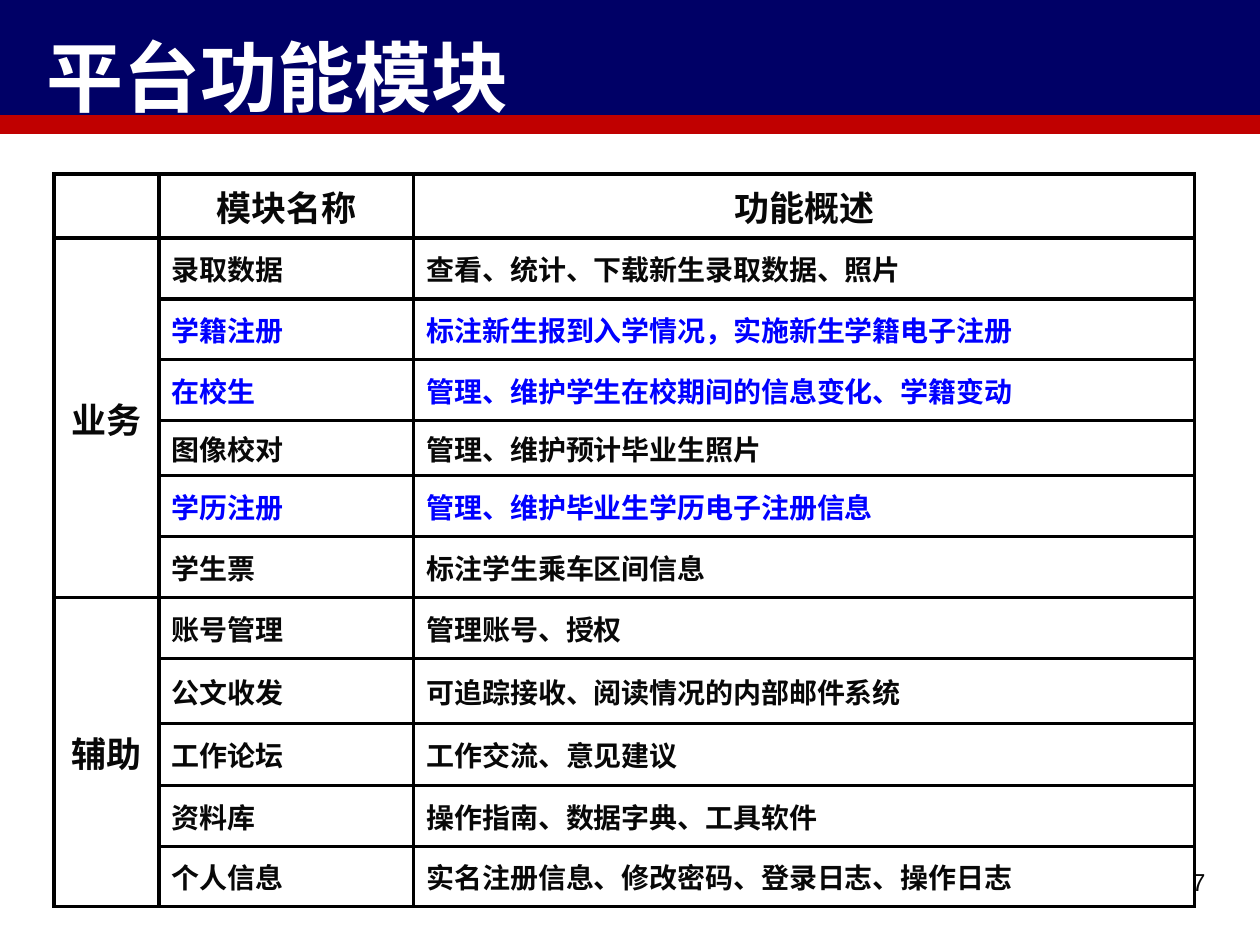
from lxml import etree
from pptx import Presentation, util as u
from pptx.dml.color import RGBColor
from pptx.enum import shapes, text
from pptx.oxml.ns import qn

CJK = "Noto Sans CJK SC"
INK, BLUE, WHITE = "080808", "0000FF", "FFFFFF"
TITLE = "平台功能模块"
PAGE_NUMBER = "7"
BANDS = [("C00000", 100, 34), ("000066", 0, 115)]
HEADINGS = ["模块名称", "功能概述"]
GROUPS = [
    ("业务", [
        ("录取数据", "查看、统计、下载新生录取数据、照片", INK),
        ("学籍注册", "标注新生报到入学情况，实施新生学籍电子注册", BLUE),
        ("在校生", "管理、维护学生在校期间的信息变化、学籍变动", BLUE),
        ("图像校对", "管理、维护预计毕业生照片", INK),
        ("学历注册", "管理、维护毕业生学历电子注册信息", BLUE),
        ("学生票", "标注学生乘车区间信息", INK),
    ]),
    ("辅助", [
        ("账号管理", "管理账号、授权", INK),
        ("公文收发", "可追踪接收、阅读情况的内部邮件系统", INK),
        ("工作论坛", "工作交流、意见建议", INK),
        ("资料库", "操作指南、数据字典、工具软件", INK),
        ("个人信息", "实名注册信息、修改密码、登录日志、操作日志", INK),
    ]),
]
COLUMN_WIDTHS = [105, 255, 781]
ROW_HEIGHTS = [64, 61, 61, 61, 55, 61, 61, 61, 65, 62, 61, 60]
INDENT = 48


def px(n):
    return u.Emu(round(n * 914400 / 126))


def color(value):
    return RGBColor.from_string(value)


def write(frame, words, size, ink, align, font=CJK, bold=True):
    frame.text = words
    paragraph = frame.paragraphs[0]
    paragraph.alignment = align
    run = paragraph.runs[0]
    for name, value in {"size": u.Pt(size), "bold": bold, "name": font}.items():
        setattr(run.font, name, value)
    run.font.color.rgb = color(ink)
    east_asian = etree.SubElement(run.font._element, qn("a:ea"))
    east_asian.set("typeface", font)
    return paragraph


def fill_cell(cell, words, size, ink, align):
    paragraph = write(cell.text_frame, words, size, ink, align)
    properties = paragraph._p.get_or_add_pPr()
    properties.set("marL", str(px(INDENT)))
    properties.set("indent", str(-px(INDENT)))


def style_cell(cell):
    cell.vertical_anchor = text.MSO_ANCHOR.MIDDLE
    properties = cell._tc.get_or_add_tcPr()
    for side in ("lnL", "lnR", "lnT", "lnB"):
        border = etree.SubElement(properties, qn(f"a:{side}"), w=str(u.Pt(2)))
        solid = etree.SubElement(border, qn("a:solidFill"))
        etree.SubElement(solid, qn("a:srgbClr"), val="000000")
    cell.fill.background()


def add_bands(slide):
    for fill, top, height in BANDS:
        band = slide.shapes.add_shape(
            shapes.MSO_SHAPE.RECTANGLE, 0, px(top), px(1260), px(height))
        band.shadow.inherit = False
        band.fill.solid()
        band.fill.fore_color.rgb = color(fill)
        band.line.fill.background()


def add_title(slide):
    title = slide.shapes.title
    slide.shapes._spTree.append(title._element)
    for name, value in zip(("left", "top", "width", "height"), (34, 26, 1071, 80)):
        setattr(title, name, px(value))
    title.text_frame.auto_size = text.MSO_AUTO_SIZE.NONE
    title.text_frame.vertical_anchor = text.MSO_ANCHOR.MIDDLE
    heading = write(title.text_frame, TITLE, 44, WHITE, text.PP_ALIGN.LEFT)
    heading.line_spacing = 1.2


def add_page_number(slide):
    number = slide.shapes.add_textbox(px(903), px(861), px(315), px(65))
    number.text_frame.word_wrap = True
    write(number.text_frame, PAGE_NUMBER, 14, INK, text.PP_ALIGN.RIGHT, "Arial", False)


def add_modules(slide):
    modules = slide.shapes.add_table(
        len(ROW_HEIGHTS), len(COLUMN_WIDTHS), px(54), px(174),
        px(sum(COLUMN_WIDTHS)), px(sum(ROW_HEIGHTS))).table
    modules.first_row = modules.horz_banding = False
    for column, width in zip(modules.columns, COLUMN_WIDTHS):
        column.width = px(width)
    for row, height in zip(modules.rows, ROW_HEIGHTS):
        row.height = px(height)
    for cell in modules.iter_cells():
        style_cell(cell)

    for column, heading in enumerate(HEADINGS, 1):
        fill_cell(modules.cell(0, column), heading, 20, INK, text.PP_ALIGN.CENTER)
    first = 1
    for group, entries in GROUPS:
        last = first + len(entries) - 1
        modules.cell(first, 0).merge(modules.cell(last, 0))
        fill_cell(modules.cell(first, 0), group, 20, INK, text.PP_ALIGN.CENTER)
        for row, (module, summary, ink) in enumerate(entries, first):
            for column, words in enumerate((module, summary), 1):
                fill_cell(modules.cell(row, column), words, 16, ink, text.PP_ALIGN.LEFT)
        first = last + 1


def main():
    deck = Presentation()
    deck.slide_width, deck.slide_height = px(1260), px(945)
    slide = deck.slides.add_slide(deck.slide_layouts[5])
    add_bands(slide)
    add_page_number(slide)
    add_title(slide)
    add_modules(slide)
    deck.save("out.pptx")


if __name__ == "__main__":
    main()
